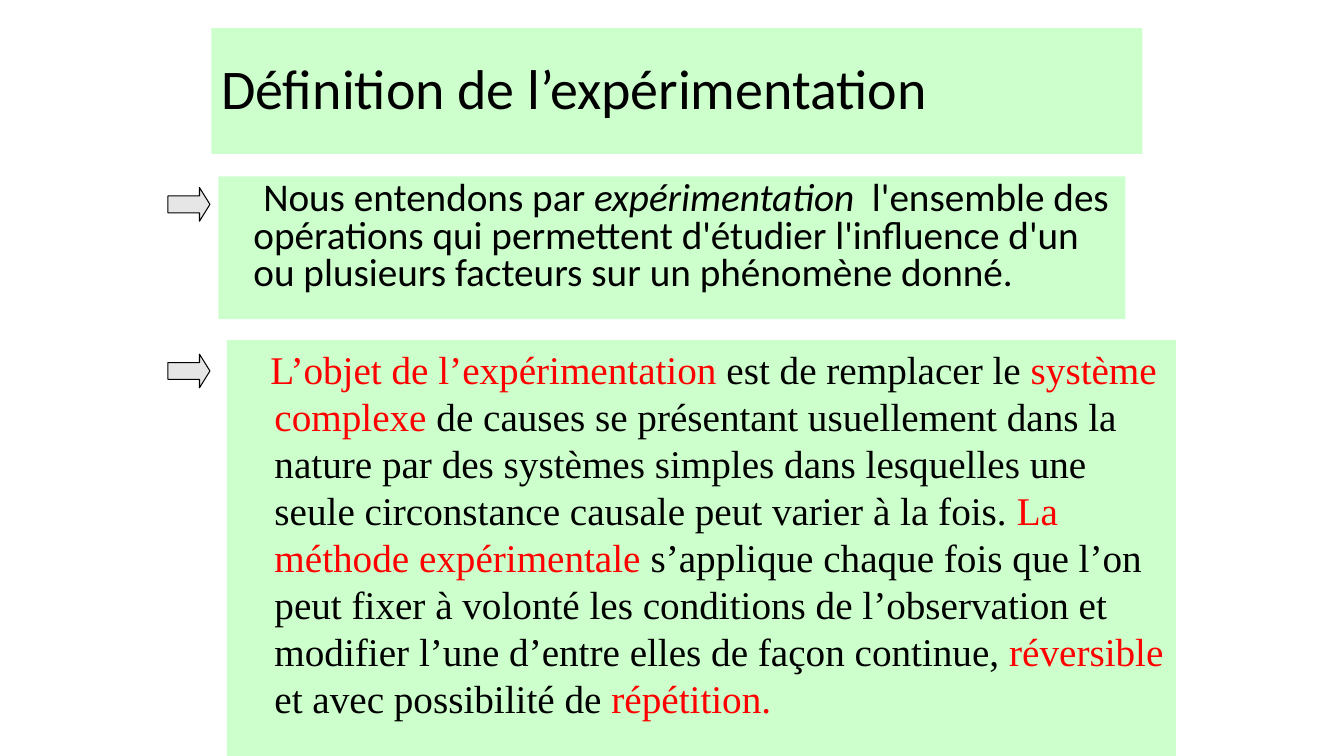
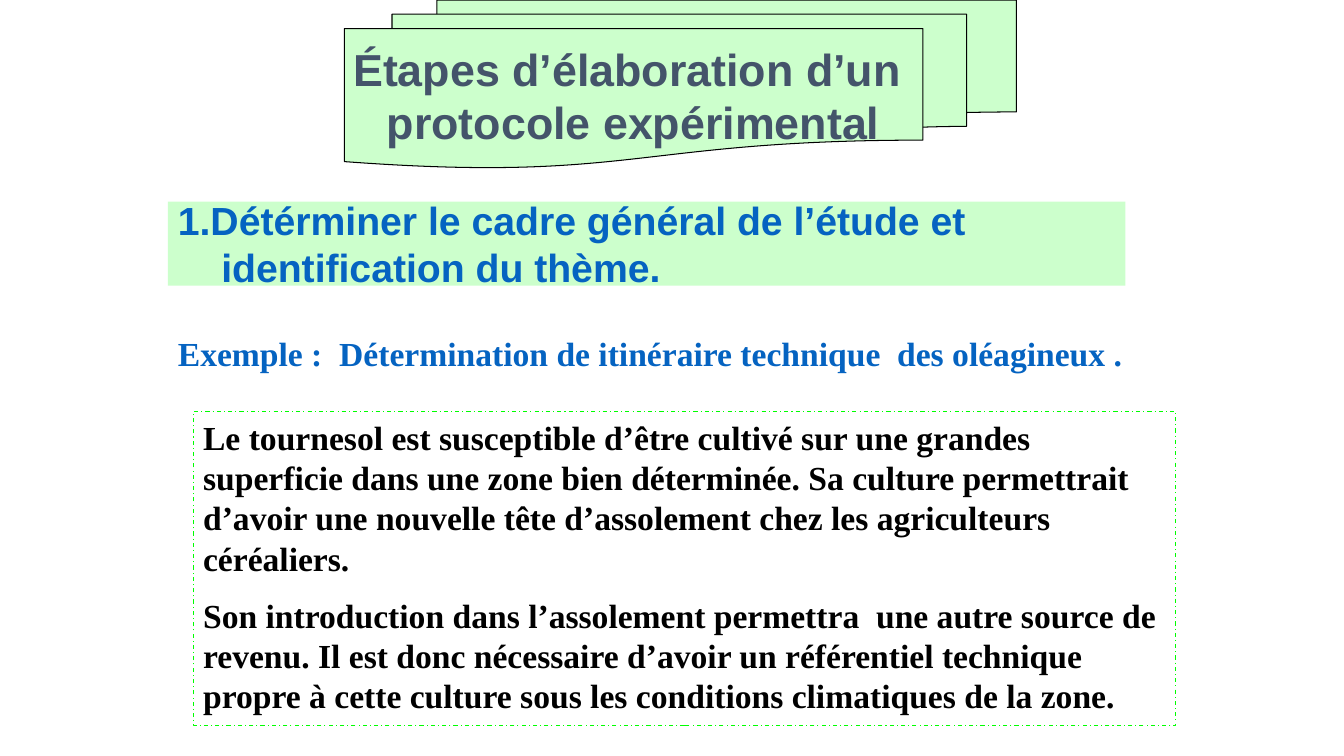
"""Build two slides on the definition and the design of an experiment."""
from dataclasses import dataclass

from pptx import Presentation
from pptx import util as u
from pptx.dml.color import RGBColor
from pptx.enum import dml, shapes, text

Pt = u.Pt


@dataclass(frozen=True)
class Theme:
    panel: str = "CCFFCC"
    arrow: str = "E7E6E6"
    ink: str = "000000"
    red: str = "FF0000"
    blue: str = "0563C1"
    slate: str = "44546A"
    frame: str = "00FF00"
    sans: str = "Calibri"
    serif: str = "Times New Roman"
    display: str = "Arial"
    title_size: int = 40
    banner_size: int = 32
    body_size: int = 28
    example_size: int = 24
    line_width: float = 0.75


class Deck:
    def __init__(self, theme):
        self.theme = theme
        self.presentation = Presentation()
        self.presentation.slide_width = Pt(960)
        self.presentation.slide_height = Pt(540)
        self.slide = None

    def new_slide(self):
        layout = self.presentation.slide_layouts[6]
        self.slide = self.presentation.slides.add_slide(layout)

    def shape(self, kind, box, fill=None, line=None):
        shape = self.slide.shapes.add_shape(kind, *map(Pt, box))
        shape.shadow.inherit = False
        if fill:
            shape.fill.solid()
            shape.fill.fore_color.rgb = RGBColor.from_string(fill)
        else:
            shape.fill.background()
        if line:
            shape.line.color.rgb = RGBColor.from_string(line)
            shape.line.width = Pt(self.theme.line_width)
        else:
            shape.line.fill.background()
        return shape

    def panel(self, box):
        return self.shape(shapes.MSO_SHAPE.RECTANGLE, box, self.theme.panel)

    def arrow(self, top):
        arrow = self.shape(shapes.MSO_SHAPE.RIGHT_ARROW, (120, top, 30, 24),
                           self.theme.arrow, self.theme.ink)
        arrow.adjustments[1] = 0.31

    def dashed_frame(self, box):
        frame = self.shape(shapes.MSO_SHAPE.RECTANGLE, box, line=self.theme.frame)
        frame.line.dash_style = dml.MSO_LINE.DASH_DOT
        return frame

    def banner(self, box):
        return self.shape(shapes.MSO_SHAPE.FLOWCHART_MULTIDOCUMENT, box,
                          self.theme.panel, self.theme.ink)

    def text_box(self, box):
        return self.slide.shapes.add_textbox(*map(Pt, box))

    def fill_text(self, shape, content, font, size, color=None, bold=False,
                  accent=None, italic_accent=False, middle=False, centered=False,
                  wrap=True, line_spacing=1.0, gap=0, indents=()):
        frame = shape.text_frame
        frame.text = content
        frame.word_wrap = wrap
        frame.vertical_anchor = text.MSO_ANCHOR.MIDDLE if middle else text.MSO_ANCHOR.TOP
        color = color or self.theme.ink
        for index, paragraph in enumerate(frame.paragraphs):
            paragraph.alignment = text.PP_ALIGN.CENTER if centered else text.PP_ALIGN.LEFT
            paragraph.line_spacing = line_spacing
            paragraph.space_before = Pt(gap if index else 0)
            if index < len(indents):
                margin, first = indents[index]
                properties = paragraph._p.get_or_add_pPr()
                properties.set("marL", str(Pt(margin)))
                properties.set("indent", str(Pt(first)))
            pieces = paragraph.text.split("|")
            paragraph.text = pieces[0]
            for piece in pieces[1:]:
                paragraph.add_run().text = piece
            for number, run in enumerate(paragraph.runs):
                marked = number % 2 == 1
                run.font.name = font
                run.font.size = Pt(size)
                run.font.bold = bold
                run.font.italic = marked and italic_accent
                run.font.color.rgb = RGBColor.from_string(
                    accent if marked and accent else color)


def definition_slide(deck):
    theme = deck.theme
    deck.new_slide()
    deck.fill_text(
        deck.panel((151, 20, 665, 90)), "Définition de l’expérimentation",
        theme.sans, theme.title_size, middle=True, line_spacing=0.9)
    deck.fill_text(
        deck.panel((156, 126, 648, 102)),
        "Nous entendons par |expérimentation  |l'ensemble des opérations qui "
        "permettent d'étudier l'influence d'un ou plusieurs facteurs sur un "
        "phénomène donné.",
        theme.sans, theme.body_size, italic_accent=True,
        line_spacing=0.8, indents=[(18, 7)])
    deck.fill_text(
        deck.panel((162, 243, 678, 297)),
        "L’objet de l’expérimentation |est de remplacer le |système complexe |"
        "de causes se présentant usuellement dans la nature par des systèmes "
        "simples dans lesquelles une seule circonstance causale peut varier à "
        "la fois. |La méthode expérimentale |s’applique chaque fois que l’on "
        "peut fixer à volonté les conditions de l’observation et modifier "
        "l’une d’entre elles de façon continue, |réversible |et avec "
        "possibilité de |répétition.",
        theme.serif, theme.body_size, color=theme.red, accent=theme.ink,
        indents=[(27, -3)])
    for top in (134, 253):
        deck.arrow(top)


def protocol_slide(deck):
    theme = deck.theme
    deck.new_slide()
    deck.fill_text(
        deck.text_box((120, 234, 720, 36)),
        "Exemple :  Détermination de itinéraire technique  des oléagineux .",
        theme.serif, theme.example_size, color=theme.blue, bold=True)
    deck.fill_text(
        deck.dashed_frame((138, 294, 702, 224)),
        "Le tournesol est susceptible d’être cultivé sur une grandes superficie "
        "dans une zone bien déterminée. Sa culture permettrait d’avoir une "
        "nouvelle tête d’assolement chez les agriculteurs céréaliers.\n"
        "Son introduction dans l’assolement permettra  une autre source de "
        "revenu. Il est donc nécessaire d’avoir un référentiel technique propre "
        "à cette culture sous les conditions climatiques de la zone.",
        theme.serif, theme.example_size, bold=True, gap=12)
    deck.fill_text(
        deck.panel((120, 144, 684, 60)),
        "1.Détérminer le cadre général de l’étude et\nidentification du thème.",
        theme.display, theme.body_size, color=theme.blue, bold=True,
        middle=True, indents=[(0, 0), (31, 0)])
    deck.fill_text(
        deck.banner((246, 0, 480, 120)),
        "Étapes d’élaboration d’un \nprotocole expérimental",
        theme.display, theme.banner_size, color=theme.slate, bold=True,
        middle=True, centered=True, wrap=False)


def main():
    deck = Deck(Theme())
    definition_slide(deck)
    protocol_slide(deck)
    deck.presentation.save("out.pptx")


if __name__ == "__main__":
    main()
